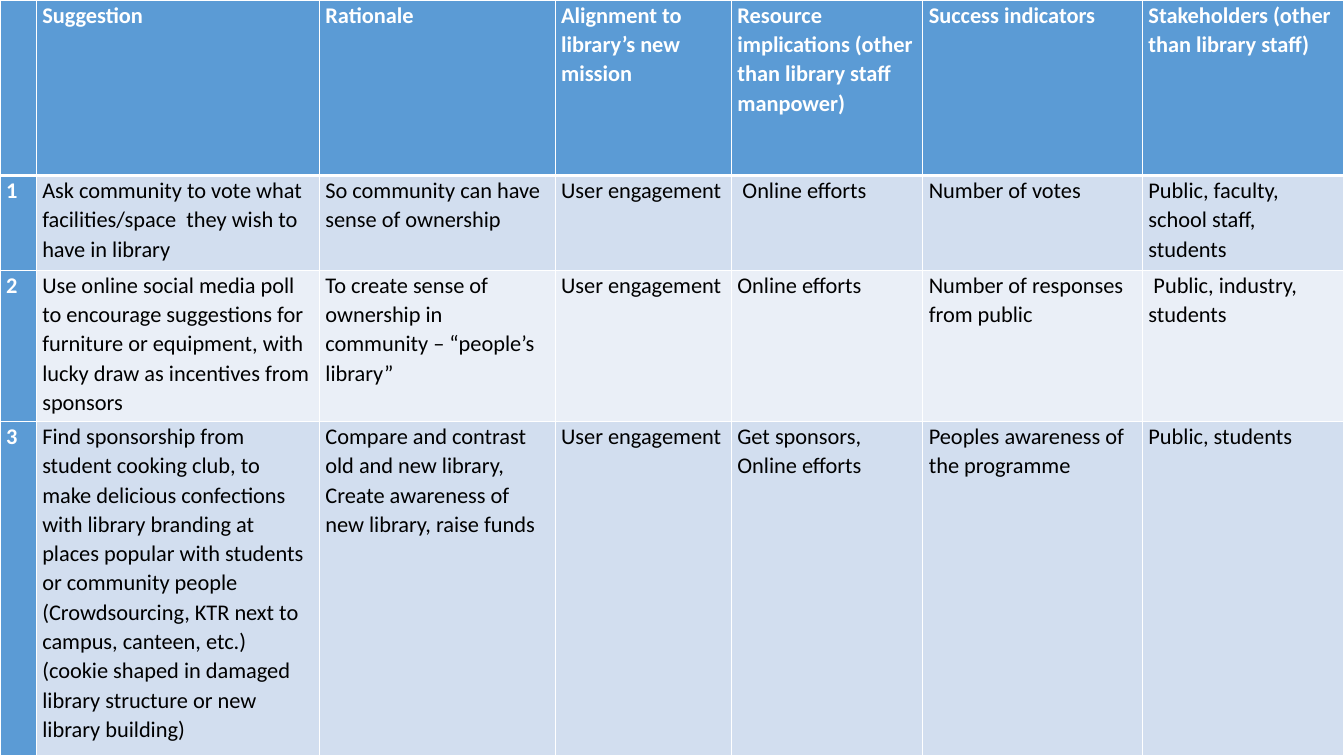
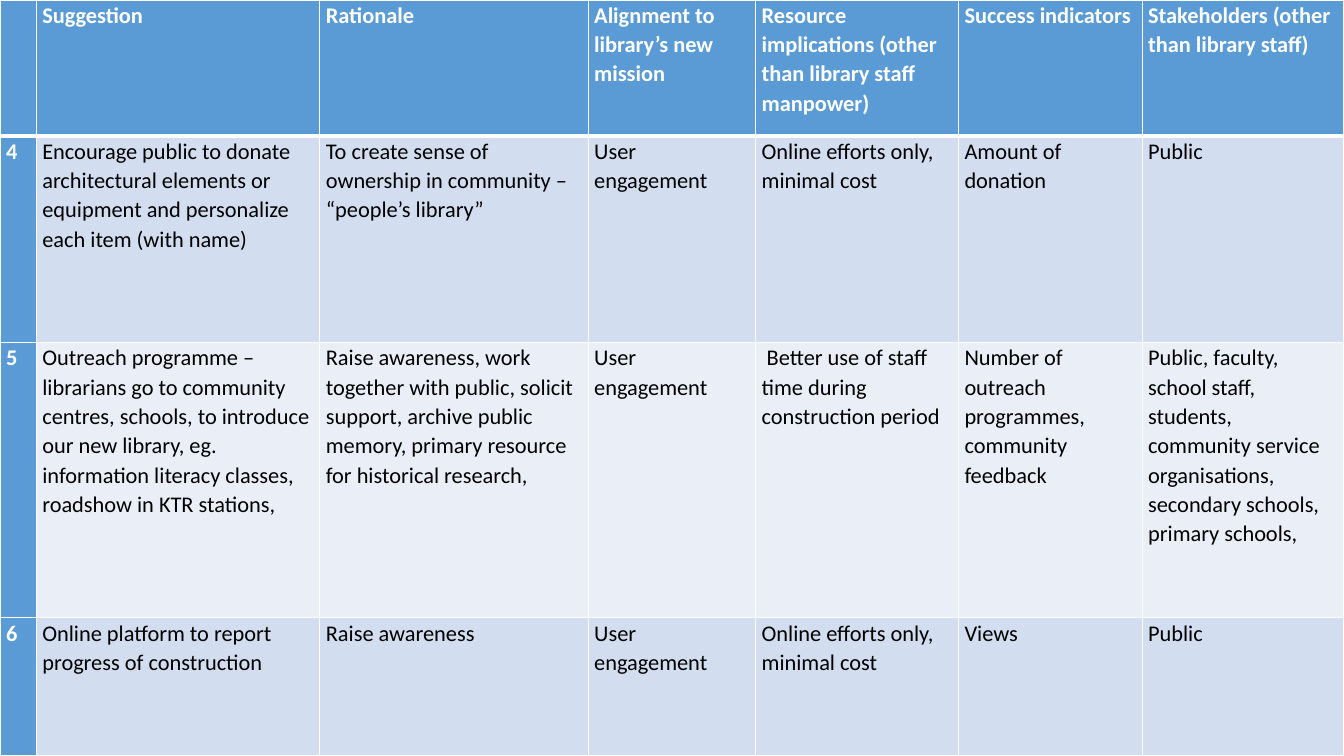
from lxml import etree
from pptx import Presentation
from pptx.dml.color import RGBColor
from pptx.oxml import ns
from pptx.util import Inches, Pt

# Shared look
BLUE = RGBColor(0x5B, 0x9B, 0xD5)
BAND_DARK = RGBColor(0xD2, 0xDE, 0xEF)
BAND_LIGHT = RGBColor(0xEA, 0xEF, 0xF7)
WHITE = RGBColor(0xFF, 0xFF, 0xFF)
BLACK = RGBColor(0x00, 0x00, 0x00)
FONT = "Calibri"
TEXT_SIZE = Pt(16)
LINE_SPACING = 1.07
SIDE_MARGIN = Inches(0.06)
THIN, THICK = Pt(1), Pt(3)
SLIDE_WIDTH, SLIDE_HEIGHT = Inches(13.33), Inches(7.5)

HEADINGS = [
    "",
    "Suggestion",
    "Rationale",
    "Alignment to library’s new mission",
    "Resource implications (other than library staff manpower)",
    "Success indicators",
    "Stakeholders (other than library staff)",
]

# Each page: column widths, row heights, number of its first suggestion, rows
PAGES = [
    {
        "widths": [0.36, 2.81, 2.34, 1.75, 1.9, 2.18, 2],
        "heights": [1.74, 0.94, 1.5, 3.32],
        "first": 1,
        "rows": [
            ["Ask community to vote what facilities/space  they wish to have in library",
             "So community can have sense of ownership",
             "User engagement",
             " Online efforts",
             "Number of votes",
             "Public, faculty, school staff, students"],
            ["Use online social media poll to encourage suggestions for furniture "
             "or equipment, with lucky draw as incentives from sponsors",
             "To create sense of ownership in community – “people’s library”",
             "User engagement",
             "Online efforts",
             "Number of responses from public",
             " Public, industry, students"],
            ["Find sponsorship from student cooking club, to make delicious "
             "confections with library branding at places popular with students "
             "or community people (Crowdsourcing, KTR next to campus, canteen, "
             "etc.) (cookie shaped in damaged library structure or new library "
             "building)",
             "Compare and contrast old and new library, Create awareness of new "
             "library, raise funds",
             "User engagement",
             "Get sponsors, Online efforts",
             "Peoples awareness of the programme",
             "Public, students"],
        ],
    },
    {
        "widths": [0.36, 2.81, 2.66, 1.66, 2.01, 1.82, 2],
        "heights": [1.35, 2.05, 2.73, 1.37],
        "first": 4,
        "rows": [
            ["Encourage public to donate architectural elements or equipment and "
             "personalize each item (with name)",
             "To create sense of ownership in community – “people’s library”",
             "User engagement",
             "Online efforts only, minimal cost",
             "Amount of donation",
             "Public"],
            ["Outreach programme – librarians go to community centres, schools, to "
             "introduce our new library, eg. information literacy classes, "
             "roadshow in KTR stations,",
             "Raise awareness, work together with public, solicit support, archive "
             "public memory, primary resource for historical research,",
             "User engagement",
             " Better use of staff time during construction period",
             "Number of outreach programmes, community feedback",
             "Public, faculty, school staff, students, community service "
             "organisations, secondary schools, primary schools,"],
            ["Online platform to report progress of construction",
             "Raise awareness",
             "User engagement",
             "Online efforts only, minimal cost",
             "Views",
             "Public"],
        ],
    },
]


def set_borders(cell, top, bottom):
    """Draw white cell edges; top and bottom give the line widths."""
    properties = cell._tc.get_or_add_tcPr()
    edges = {"a:lnL": THIN, "a:lnR": THIN, "a:lnT": top, "a:lnB": bottom}
    for tag, width in edges.items():
        line = etree.SubElement(properties, ns.qn(tag), w=str(int(width)))
        fill = etree.SubElement(line, ns.qn("a:solidFill"))
        etree.SubElement(fill, ns.qn("a:srgbClr"), val=str(WHITE))


def fill_cell(cell, words, row, column):
    """Style one cell by its place: header row, number column or banded body."""
    accent = row == 0 or column == 0
    set_borders(cell, THICK if row == 1 else THIN, THICK if row == 0 else THIN)
    cell.fill.solid()
    cell.fill.fore_color.rgb = BLUE if accent else (BAND_LIGHT, BAND_DARK)[row % 2]
    cell.margin_left = cell.margin_right = SIDE_MARGIN
    cell.margin_top = cell.margin_bottom = 0

    para = cell.text_frame.paragraphs[0]
    para.text = words
    para.line_spacing = LINE_SPACING
    para.font.size = TEXT_SIZE
    for span in para.runs:
        span.font.name = FONT
        span.font.size = TEXT_SIZE
        span.font.bold = accent
        span.font.color.rgb = WHITE if accent else BLACK


def add_suggestion_table(page, box, widths, heights, first, rows):
    """Place a numbered table of suggestions in box (left, top, width, height)."""
    numbered = [[str(number), *row] for number, row in enumerate(rows, first)]
    grid = [HEADINGS, *numbered]
    table = page.shapes.add_table(len(grid), len(HEADINGS), *box).table

    # Share the box out in proportion to the given widths and heights
    for column, width in zip(table.columns, widths):
        column.width = int(box[2] * width / sum(widths))
    for row, height in zip(table.rows, heights):
        row.height = int(box[3] * height / sum(heights))

    for r, row in enumerate(grid):
        for c, words in enumerate(row):
            fill_cell(table.cell(r, c), words, r, c)


def main():
    deck = Presentation()
    deck.slide_width, deck.slide_height = SLIDE_WIDTH, SLIDE_HEIGHT
    for content in PAGES:
        page = deck.slides.add_slide(deck.slide_layouts[6])
        add_suggestion_table(page, (0, 0, SLIDE_WIDTH, SLIDE_HEIGHT), **content)
    deck.save("out.pptx")


if __name__ == "__main__":
    main()
